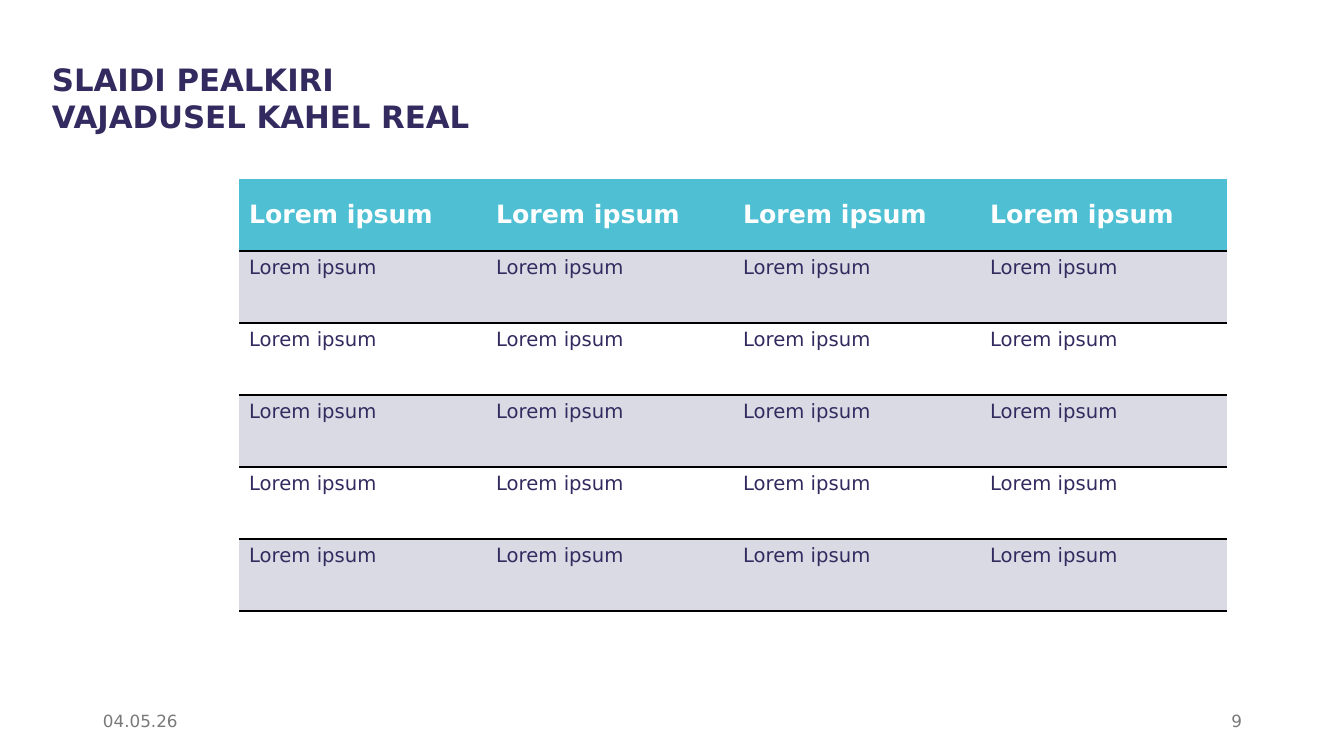
from dataclasses import dataclass

from lxml.etree import SubElement
from pptx import Presentation
from pptx.dml.color import RGBColor
from pptx.enum.text import MSO_ANCHOR, PP_ALIGN
from pptx.oxml import parse_xml
from pptx.oxml.ns import nsdecls, qn
from pptx.slide import Slide
from pptx.table import _Cell
from pptx.text.text import TextFrame
from pptx.util import Emu, Pt

FONT = "DejaVu Sans"
COLOURS = {
    "navy": "332B60",
    "teal": "4FBFD3",
    "lavender": "DADAE4",
    "white": "FFFFFF",
    "grey": "797979",
    "black": "000000",
}
NO_GRID_STYLE = "{2D5ABB26-0587-4C30-8999-92F81FD0307C}"
RULE_WIDTH = Pt(1)

COLUMN_COUNT, BODY_ROW_COUNT = 4, 5
COLUMN_WIDTH, ROW_HEIGHT = 247, 72
TABLE_LEFT, TABLE_TOP = 239, 179


def px(length: int) -> Emu:
    """Convert pixels, 100.8 to the inch, to EMU."""
    return Emu(round(length * 914400 / 100.8))


def colour(name: str) -> RGBColor:
    return RGBColor.from_string(COLOURS[name])


@dataclass(frozen=True)
class TextStyle:
    size: int
    colour: str
    bold: bool = False


@dataclass(frozen=True)
class Label:
    text: str
    left: int
    top: int
    width: int
    height: int
    style: TextStyle
    margin_x: int = 10
    margin_y: int = 5
    anchor: MSO_ANCHOR = MSO_ANCHOR.MIDDLE
    align: PP_ALIGN = PP_ALIGN.LEFT


@dataclass(frozen=True)
class RowStyle:
    text: TextStyle
    fill: str
    anchor: MSO_ANCHOR


TITLE = TextStyle(22, "navy", bold=True)
FOOTER = TextStyle(12, "grey")
BODY = TextStyle(14, "navy")

HEADER_ROW = RowStyle(TextStyle(18, "white", bold=True), "teal", MSO_ANCHOR.MIDDLE)
BANDS = [RowStyle(BODY, fill, MSO_ANCHOR.TOP) for fill in ("lavender", "white")]

LABELS = [
    Label("SLAIDI PEALKIRI\vVAJADUSEL KAHEL REAL", 52, 61, 973, 92, TITLE,
          margin_x=0, margin_y=0, anchor=MSO_ANCHOR.TOP),
    Label("04.05.26", 93, 701, 302, 40, FOOTER),
    Label("9", 950, 701, 302, 40, FOOTER, align=PP_ALIGN.RIGHT),
]


def write_text(frame: TextFrame, text: str, style: TextStyle) -> None:
    frame.text = text
    for para in frame.paragraphs:
        for span in para.runs:
            span.font.name = FONT
            span.font.size = Pt(style.size)
            span.font.bold = style.bold
            span.font.color.rgb = colour(style.colour)


def add_label(page: Slide, label: Label) -> None:
    box = page.shapes.add_textbox(
        px(label.left), px(label.top), px(label.width), px(label.height))
    frame = box.text_frame
    frame.word_wrap = True
    frame.margin_left = frame.margin_right = px(label.margin_x)
    frame.margin_top = frame.margin_bottom = px(label.margin_y)
    frame.vertical_anchor = label.anchor
    write_text(frame, label.text, label.style)
    frame.paragraphs[0].alignment = label.align


def add_bottom_rule(cell: _Cell) -> None:
    rule = parse_xml(f'<a:lnB {nsdecls("a")} w="{RULE_WIDTH}"/>')
    fill = SubElement(rule, qn("a:solidFill"))
    SubElement(fill, qn("a:srgbClr"), val=COLOURS["black"])
    cell._tc.get_or_add_tcPr().insert(0, rule)


def add_table(page: Slide) -> None:
    row_styles = [HEADER_ROW] + [BANDS[i % 2] for i in range(BODY_ROW_COUNT)]
    table = page.shapes.add_table(
        len(row_styles), COLUMN_COUNT, px(TABLE_LEFT), px(TABLE_TOP),
        px(COLUMN_WIDTH * COLUMN_COUNT), px(ROW_HEIGHT * len(row_styles))).table
    table._tbl.tblPr.find(qn("a:tableStyleId")).text = NO_GRID_STYLE
    table.horz_banding = False
    for column in table.columns:
        column.width = px(COLUMN_WIDTH)
    for row, style in zip(table.rows, row_styles):
        row.height = px(ROW_HEIGHT)
        for cell in row.cells:
            cell.fill.solid()
            cell.fill.fore_color.rgb = colour(style.fill)
            cell.vertical_anchor = style.anchor
            write_text(cell.text_frame, "Lorem ipsum", style.text)
            add_bottom_rule(cell)


def main() -> None:
    deck = Presentation()
    deck.slide_width, deck.slide_height = px(1344), px(756)
    page = deck.slides.add_slide(deck.slide_layouts[6])
    add_table(page)
    for label in LABELS:
        add_label(page, label)
    deck.save("out.pptx")


if __name__ == "__main__":
    main()
